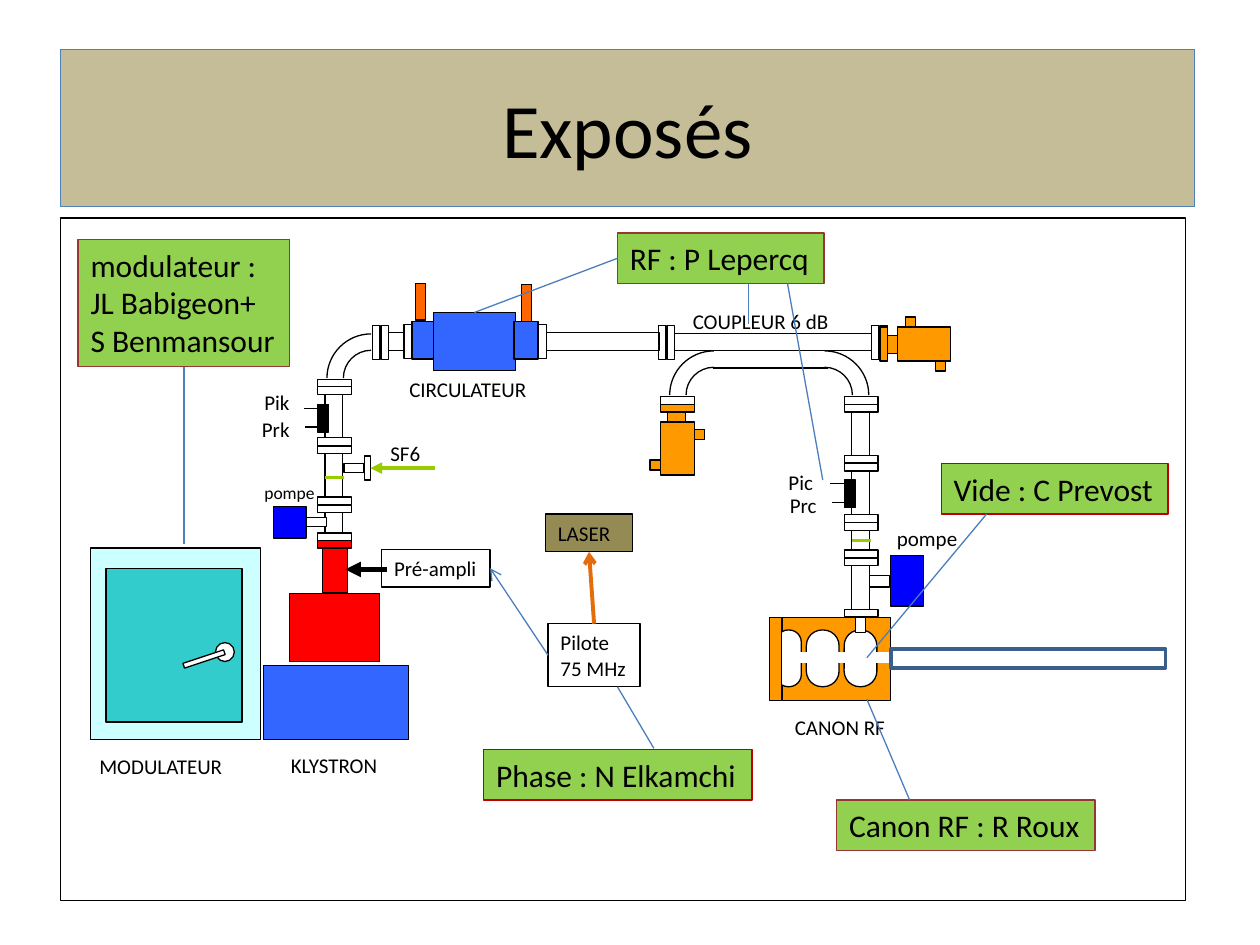
from dataclasses import dataclass

from pptx import Presentation
from pptx.dml.color import RGBColor
from pptx.enum.shapes import MSO_CONNECTOR, MSO_SHAPE
from pptx.enum.text import MSO_ANCHOR, MSO_AUTO_SIZE, PP_ALIGN
from pptx.oxml.ns import qn
from pptx.oxml.xmlchemy import OxmlElement
from pptx.util import Inches, Pt

COLS, ROWS = 1000, 750  # grid of the slide, square cells
TOP, LEFT, BOTTOM, RIGHT = range(4)
BOW = 0.55  # control arm of a quarter circle, as a share of its radius


@dataclass(frozen=True)
class Theme:
    font: str = "Calibri"
    title: int = 44
    call: int = 18
    label: int = 12
    small: int = 10
    thin: float = 0.75
    black: str = "000000"
    white: str = "FFFFFF"
    sand: str = "C4BD97"
    olive: str = "948A54"
    edge: str = "4F81BD"
    link: str = "4B7EBC"
    tube: str = "3A5F8C"
    pale: str = "CCFFFF"
    teal: str = "33CCCC"
    blue: str = "3366FF"
    pump: str = "0000FF"
    red: str = "FF0000"
    lime: str = "99CC00"
    green: str = "92D050"
    wine: str = "953735"
    crimson: str = "C00000"
    gold: str = "FF9900"
    fin: str = "FF6600"
    rust: str = "E46C0A"


T = Theme()


def grid(*cells):
    return [Inches(n * 10 / COLS) for n in cells]


def group(shapes):
    return shapes.add_group_shape().shapes


def paint(shape, fill, line, width=T.thin):
    if fill:
        shape.fill.solid()
        shape.fill.fore_color.rgb = RGBColor.from_string(fill)
    else:
        shape.fill.background()
    shape.line.color.rgb = RGBColor.from_string(line)
    shape.line.width = Pt(width)


def write(shape, text, size=T.label, align=PP_ALIGN.LEFT, anchor=MSO_ANCHOR.TOP,
          wrap=True, grow=True):
    frame = shape.text_frame
    frame.text = text
    frame.word_wrap = wrap
    frame.vertical_anchor = anchor
    frame.auto_size = MSO_AUTO_SIZE.SHAPE_TO_FIT_TEXT if grow else MSO_AUTO_SIZE.NONE
    for para in frame.paragraphs:
        para.alignment = align
        font = para.runs[0].font
        font.name, font.size = T.font, Pt(size)
        font.color.rgb = RGBColor.from_string(T.black)


def box(shapes, x, y, w, h, fill=T.white, line=T.black, width=T.thin, turn=0,
        kind=MSO_SHAPE.RECTANGLE):
    shape = shapes.add_shape(kind, *grid(x, y, w, h))
    shape.shadow.inherit = False
    shape.rotation = turn
    paint(shape, fill, line, width)
    return shape


def note(shapes, text, x, y, w, h, fill=None, line=T.black, size=T.label, wrap=False):
    shape = box(shapes, x, y, w, h, fill, line)
    write(shape, text, size, wrap=wrap)
    return shape


def label(shapes, text, x, y, w, h=30, size=T.label, wrap=True):
    write(shapes.add_textbox(*grid(x, y, w, h)), text, size, wrap=wrap)


def link(shapes, start, end, color=T.link, width=T.thin, tip=None):
    """Draw a line; each end is a grid point or a (shape, side) pair."""
    ends = [p if isinstance(p[0], (int, float)) else None for p in (start, end)]
    line = shapes.add_connector(MSO_CONNECTOR.STRAIGHT,
                                *grid(*(ends[0] or (0, 0)), *(ends[1] or (0, 0))))
    if not ends[0]:
        line.begin_connect(*start)
    if not ends[1]:
        line.end_connect(*end)
    line.line.color.rgb = RGBColor.from_string(color)
    line.line.width = Pt(width)
    if tip:
        tail = OxmlElement("a:tailEnd")
        tail.set("type", tip)
        line.line._get_or_add_ln().append(tail)
    line._element.spPr.append(OxmlElement("a:effectLst"))


def flange(shapes, x, y, turn=0):
    box(shapes, x, y, 27, 6, turn=turn)


def duct(shapes, x, y, pipe=40, step=40.5):
    """Upright pipe between two flanges that are one step apart."""
    part = group(shapes)
    flange(part, x, y)
    box(part, x + 6, y + 6, 14, pipe)
    flange(part, x, y + step)
    return part


def bend(shapes, x, y, side):
    """Quarter turn about (x, y), towards side -1 (left) or 1 (right)."""
    for radius in (22, 35):
        form = shapes.build_freeform(*grid(x, y - radius))
        form.add_line_segments([grid(x + side * radius, y)], close=False)
        curve = form.convert_to_shape()
        curve.shadow.inherit = False
        paint(curve, None, T.black)
        size = curve.width
        arm = BOW if side > 0 else 1 - BOW
        arc = next(curve._element.iter(qn("a:lnTo")))
        for i, (px, py) in enumerate(((arm, 0), (max(side, 0), 1 - BOW))):
            point = OxmlElement("a:pt")
            point.set("x", str(int(px * size)))
            point.set("y", str(int(py * size)))
            arc.insert(i, point)
        arc.tag = qn("a:cubicBezTo")


def probe(shapes, x, y):
    box(shapes, x, y, 9, 22, T.black)
    for dx, dy in ((0, 3), (1, 18)):
        link(shapes, (x + dx, y + dy), (x + dx - 11, y + dy), T.black)


def load(shapes, x, y, turn=0):
    """Load whose flange is centred on (x, y); turn is 0 or 270."""
    part = group(shapes)
    for dx, dy, w, h in ((0, 0, 27, 6), (-0.5, 23, 14, 40), (0, 32, 27, 42),
                         (17.5, 21, 8, 8), (-17.5, 45, 8, 8)):
        if turn:
            dx, dy = dy, -dx
        box(part, x + dx - w / 2, y + dy - h / 2, w, h, T.gold, turn=turn)


def source(shapes):
    box(shapes, 72, 435, 135, 152, T.pale)
    box(shapes, 84, 451, 108, 122, T.teal)
    box(shapes, 171, 510, 15, 15, kind=MSO_SHAPE.OVAL)
    box(shapes, 145, 521, 34, 4, turn=341.6)
    box(shapes, 209, 528, 115, 59, T.blue)
    for part in ((230, 471, 71, 54), (256, 435, 20, 35), (252, 429, 27, 6)):
        box(shapes, *part, T.red)


def left(shapes):
    duct(shapes, 252, 354)
    box(shapes, 273, 368, 16, 7)
    port = box(shapes, 289, 362, 5, 19)
    link(shapes, (345, 371.5), (port, RIGHT), T.lime, 2.25, "triangle")
    duct(shapes, 252, 401, 16, 22)
    link(shapes, (258, 379), (273, 379), T.lime, 2.25)
    duct(shapes, 252, 307)
    probe(shapes, 252, 321)
    elbow = group(shapes)
    flange(elbow, 252, 301)
    bend(elbow, 294.5, 300, -1)
    flange(elbow, 285, 269, 90)
    box(shapes, 242, 411, 17, 7)
    box(shapes, 217, 402, 26, 25, T.pump)


def line(shapes):
    """Horizontal waveguide with its circulator; returns the circulator."""
    flange(shapes, 512, 269, 90)
    box(shapes, 406, 161, 14, 220, turn=90)
    for x in (292, 519):
        flange(shapes, x, 269, 90)
    box(shapes, 607, 193, 14, 157, turn=90)
    unit = group(shapes)
    box(unit, 327, 255, 19, 30, T.blue)
    core = box(unit, 344, 248, 65, 46, T.blue)
    box(unit, 408, 255, 19, 30, T.blue)
    for x, y in ((330, 225), (414, 226)):
        box(unit, x, y, 8, 29, T.fin)
    for x in (310, 417):
        flange(shapes, x, 268, 90)
    pair = group(shapes)
    for x in (681, 688):
        flange(pair, x, 269, 90)
    return core


def right(shapes):
    duct(shapes, 670, 321)
    duct(shapes, 670, 368)
    probe(shapes, 670, 381)
    valve = duct(shapes, 670, 415, 16, 21.5)
    link(valve, (676, 429), (691, 429), T.lime, 2.25)
    loop = group(shapes)
    for x, mid, side in ((524, 566.5, -1), (670, 654.5, 1)):
        flange(loop, x, 315)
        bend(loop, mid, 313.5, side)
    for y in (278, 292):
        link(loop, (566, y), (657, y), T.black)
    load(shapes, 537.5, 324)
    load(shapes, 701.5, 273, 270)
    duct(shapes, 670, 443)
    box(shapes, 690, 457, 16, 9)
    box(shapes, 707, 441, 26, 40, T.pump)


def gun(shapes):
    body = group(shapes)
    box(body, 621, 490, 86, 66, T.gold)
    for x, w in ((640, 26), (670, 26), (616, 20)):
        cell = box(body, x, 500, w, 45, kind=MSO_SHAPE.ROUNDED_RECTANGLE)
        cell.adjustments[0] = 0.48
    box(body, 611, 490, 9, 66, T.gold)
    box(body, 625, 518, 91, 8, line=T.white)
    box(shapes, 679, 490, 8, 12)


def names(shapes):
    for item in (("SF6", 300, 345, 54), ("Pik", 200, 304, 64), ("Prk", 198, 326, 55),
                 ("Pic", 616, 368, 77), ("Prc", 617, 386, 73),
                 ("MODULATEUR", 69, 593, 130), ("KLYSTRON", 221, 592, 122),
                 ("CIRCULATEUR", 315, 294, 133), ("COUPLEUR 6 dB", 540, 240, 150),
                 ("CANON RF", 621, 562, 103)):
        label(shapes, *item)
    label(shapes, "pompe", 702, 412, 69, wrap=False)
    label(shapes, "pompe", 200, 378, 61, 27, T.small, wrap=False)


def talks(shapes, core):
    link(shapes, (307, 452), (274, 452), T.black, 3, "triangle")
    amp = note(shapes, "Pré-ampli", 303, 436, 86, 30)
    box(shapes, 48, 173, 893, 542, None)
    box(shapes, 707, 515, 218, 15, line=T.tube, width=2)
    canon, rf, mod, vide, phase = [
        note(shapes, text, x, y, w, h, T.green, edge, T.call)
        for text, x, y, w, h, edge in (
            ("Canon RF : R Roux", 664, 635, 205, 40, T.wine),
            ("RF : P Lepercq", 490, 185, 164, 40, T.wine),
            ("modulateur :\nJL Babigeon+\nS Benmansour", 62, 190, 168, 101, T.wine),
            ("Vide : C Prevost", 747, 368, 180, 40, T.crimson),
            ("Phase : N Elkamchi", 384, 595, 213, 40, T.crimson))]
    clock = note(shapes, "Pilote\n75 MHz", 435, 495, 73, 50)
    laser = note(shapes, "LASER", 433, 408, 69, 30, T.olive, wrap=True)
    for start, end in (((mod, BOTTOM), (146, 432)), ((rf, LEFT), (core, TOP)),
                       ((594, 225), (594, 257)), ((625, 225), (653, 381)),
                       ((722, 635), (688, 555)), ((783, 408), (688, 522)),
                       ((519, 594), (490, 545))):
        link(shapes, start, end)
    link(shapes, (clock, LEFT), (amp, RIGHT), tip="arrow")
    link(shapes, (clock, TOP), (laser, BOTTOM), T.rust, 2.25, "arrow")


def main():
    deck = Presentation()
    deck.slide_width, deck.slide_height = grid(COLS, ROWS)
    shapes = deck.slides.add_slide(deck.slide_layouts[5]).shapes
    head = shapes.title
    head.left, head.top, head.width, head.height = grid(48, 39, 900, 125)
    paint(head, T.sand, T.edge)
    write(head, "Exposés", T.title, PP_ALIGN.CENTER, MSO_ANCHOR.MIDDLE, grow=False)
    source(shapes)
    left(shapes)
    core = line(shapes)
    right(shapes)
    gun(shapes)
    names(shapes)
    talks(shapes, core)
    deck.save("out.pptx")


if __name__ == "__main__":
    main()
